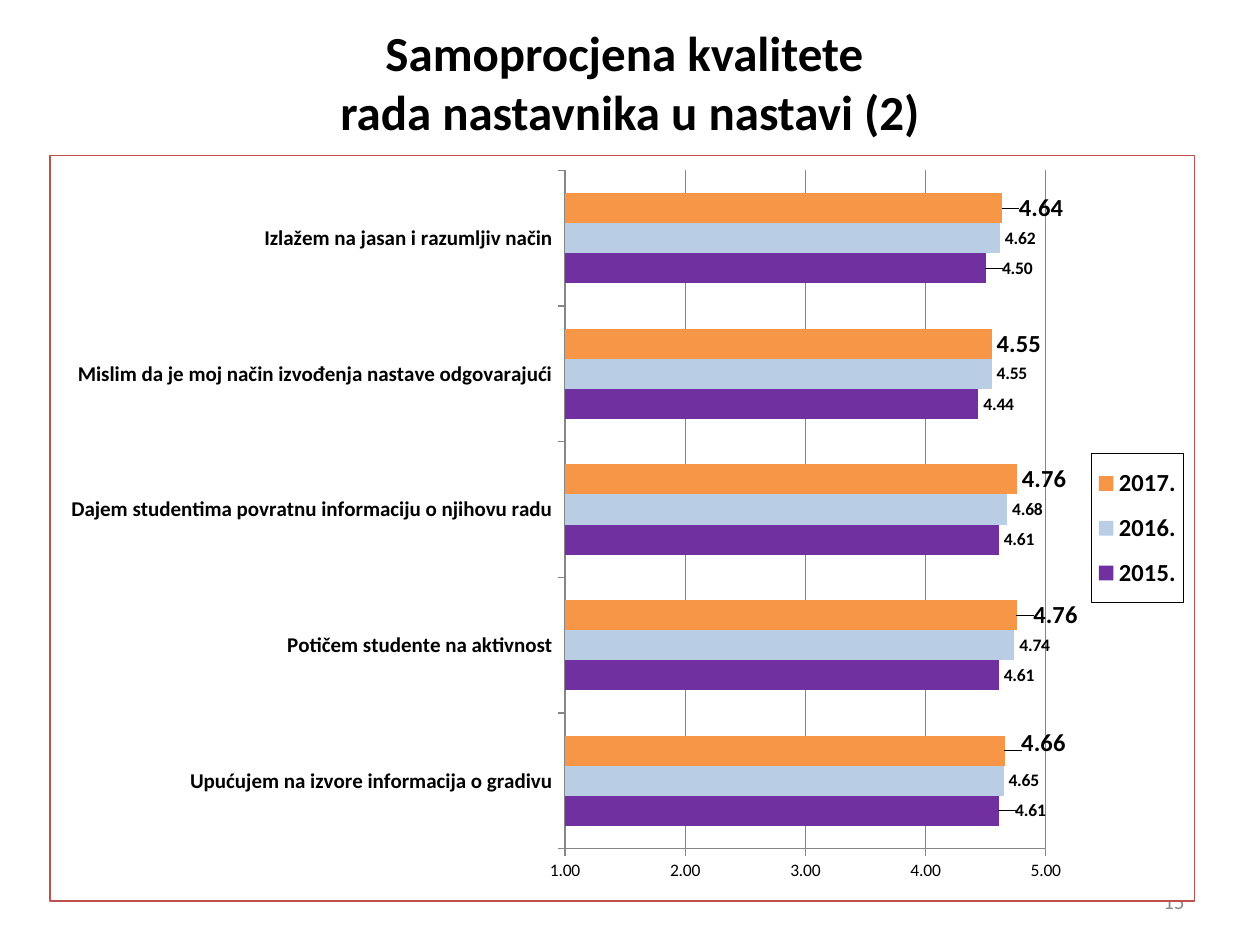
import dataclasses
from typing import Any, NamedTuple, Sequence

import pptx
import pptx.chart.data
import pptx.dml.color
import pptx.enum.chart
import pptx.enum.text
import pptx.oxml
import pptx.oxml.ns
import pptx.util
from pptx.util import Cm

NUMBER_FORMAT = "0.00"
ALIGN = pptx.enum.text.PP_ALIGN
ANCHOR = pptx.enum.text.MSO_ANCHOR


@dataclasses.dataclass(frozen=True)
class Theme:
    font: str = "Calibri"
    ink: str = "000000"
    paper: str = "FFFFFF"
    muted: str = "898989"
    grid: str = "868686"
    frame: str = "C0504D"
    title_size: int = 28
    legend_size: int = 14
    category_size: int = 12
    small_size: int = 10


class Nudge(NamedTuple):
    """Label shift of one bar, as fractions of the chart."""
    category: int
    x: float
    y: float = 0


class YearSeries(NamedTuple):
    name: str
    grades: Sequence[float]
    color: str
    label_size: int
    nudges: Sequence[Nudge] = ()


THEME = Theme()
STATEMENTS = [
    "Upućujem na izvore informacija o gradivu",
    "Potičem studente na aktivnost",
    "Dajem studentima povratnu informaciju o njihovu radu",
    "Mislim da je moj način izvođenja nastave odgovarajući",
    "Izlažem na jasan i razumljiv način",
]
YEARS = [
    YearSeries("2015.", (4.61, 4.61, 4.61, 4.44, 4.5), "7030A0", THEME.small_size,
               (Nudge(0, 0.01), Nudge(4, 0.01))),
    YearSeries("2016.", (4.65, 4.74, 4.68, 4.55, 4.62), "B9CDE5", THEME.small_size),
    YearSeries("2017.", (4.66, 4.76, 4.76, 4.55, 4.64), "F79646", THEME.legend_size,
               (Nudge(0, 0.01, -0.01), Nudge(1, 0.01), Nudge(4, 0.01))),
]


def rgb(color: str) -> pptx.dml.color.RGBColor:
    return pptx.dml.color.RGBColor.from_string(color)


def format_font(font: Any, size: int, color: str = THEME.ink, bold: bool = False) -> None:
    font.name, font.size, font.bold = THEME.font, pptx.util.Pt(size), bold
    font.color.rgb = rgb(color)


def write_text(frame: Any, lines: Sequence[str], *, size: int, color: str = THEME.ink,
               bold: bool = False, align: Any = ALIGN.CENTER, anchor: Any = ANCHOR.TOP) -> None:
    frame.word_wrap, frame.vertical_anchor = True, anchor
    frame.text = "\n".join(lines)
    for paragraph in frame.paragraphs:
        paragraph.alignment = align
        format_font(paragraph.runs[0].font, size, color, bold)


def chart_xml(body: str) -> Any:
    """Parse a chart fragment whose first tag is c:layout or c:spPr."""
    tag, rest = body.split(">", 1)
    return pptx.oxml.parse_xml(f"{tag} {pptx.oxml.ns.nsdecls('c', 'a')}>{rest}")


def set_layout(parent: Any, previous: str = "", **parts: Any) -> None:
    """Give a chart part a manual layout, placed after the named child."""
    for old in parent.findall(pptx.oxml.ns.qn("c:layout")):
        parent.remove(old)
    fields = "".join(f'<c:{key} val="{value}"/>' for key, value in parts.items())
    layout = chart_xml(f"<c:layout><c:manualLayout>{fields}</c:manualLayout></c:layout>")
    if previous:
        parent.find(pptx.oxml.ns.qn(previous)).addnext(layout)
    else:
        parent.insert(0, layout)


def add_box_style(previous: Any, line: str, points: float) -> None:
    """Fill and outline a chart part; the style follows the given element."""
    previous.addnext(chart_xml(
        f'<c:spPr><a:solidFill><a:srgbClr val="{THEME.paper}"/></a:solidFill>'
        f'<a:ln w="{pptx.util.Pt(points)}"><a:solidFill><a:srgbClr val="{line}"/>'
        "</a:solidFill></a:ln></c:spPr>"))


def style_series(series: Any, year: YearSeries) -> None:
    outside = pptx.enum.chart.XL_LABEL_POSITION.OUTSIDE_END
    series.format.fill.solid()
    series.format.fill.fore_color.rgb = rgb(year.color)
    series.invert_if_negative = False
    labels = series.data_labels
    labels.show_value, labels.position = True, outside
    labels.number_format, labels.number_format_is_linked = NUMBER_FORMAT, False
    format_font(labels.font, year.label_size, bold=True)
    for nudge in year.nudges:
        label = series.points[nudge.category].data_label
        format_font(label.font, year.label_size, bold=True)
        label.position = outside
        entry = next(e for e in labels._element.findall(pptx.oxml.ns.qn("c:dLbl"))
                     if e.find(pptx.oxml.ns.qn("c:idx")).get("val") == str(nudge.category))
        set_layout(entry, "c:idx", x=nudge.x, y=nudge.y)
        entry.find(pptx.oxml.ns.qn("c:layout")).addnext(
            chart_xml(f'<c:numFmt formatCode="{NUMBER_FORMAT}" sourceLinked="0"></c:numFmt>'
                      .replace("<c:numFmt ", "<c:numFmt ")))


def style_axes(chart: Any) -> None:
    grades, statements = chart.value_axis, chart.category_axis
    grades.minimum_scale, grades.maximum_scale, grades.major_unit = 1, 5, 1
    grades.has_major_gridlines = True
    grades.tick_labels.number_format = NUMBER_FORMAT
    grades.tick_labels.number_format_is_linked = False
    format_font(grades.tick_labels.font, THEME.small_size)
    format_font(statements.tick_labels.font, THEME.category_size, bold=True)
    for part in (grades, statements, grades.major_gridlines):
        part.format.line.color.rgb = rgb(THEME.grid)
        part.format.line.width = pptx.util.Pt(0.75)
    for axis in (grades, statements):
        axis.major_tick_mark = pptx.enum.chart.XL_TICK_MARK.OUTSIDE


def add_grades_chart(slide: Any) -> None:
    data = pptx.chart.data.CategoryChartData(number_format=NUMBER_FORMAT)
    data.categories = STATEMENTS
    for year in YEARS:
        data.add_series(year.name, year.grades)
    chart = slide.shapes.add_chart(pptx.enum.chart.XL_CHART_TYPE.BAR_CLUSTERED,
                                   Cm(0.99), Cm(3.12), Cm(23.11), Cm(15.06), data).chart
    chart.has_title = False
    format_font(chart.font, THEME.small_size)
    plot = chart.plots[0]
    plot.gap_width, plot.vary_by_categories = 150, False
    for series, year in zip(plot.series, YEARS):
        style_series(series, year)
    style_axes(chart)

    # Legend in a thin black box
    chart.has_legend = True
    legend = chart.legend
    legend.position = pptx.enum.chart.XL_LEGEND_POSITION.RIGHT
    legend.include_in_layout = False
    format_font(legend.font, THEME.legend_size, bold=True)
    set_layout(legend._element, "c:legendPos", xMode="edge", yMode="edge",
               x=0.91, y=0.4, w=0.08, h=0.2)
    add_box_style(legend._element.find(pptx.oxml.ns.qn("c:overlay")), THEME.ink, 0.75)

    # Plot area and outer frame
    root = chart._chartSpace
    set_layout(root.chart.plotArea, layoutTarget="inner", xMode="edge", yMode="edge",
               x=0.45, y=0.02, w=0.42, h=0.91)
    add_box_style(root.chart, THEME.frame, 1)


def main() -> None:
    deck = pptx.Presentation()
    deck.slide_width, deck.slide_height = Cm(25.4), Cm(19.05)
    slide = deck.slides.add_slide(deck.slide_layouts[5])

    # Title
    title = slide.shapes.title
    title.left, title.top, title.width, title.height = Cm(1.7), Cm(0.33), Cm(21.77), Cm(2.97)
    title.fill.solid()
    title.fill.fore_color.rgb = rgb(THEME.paper)
    write_text(title.text_frame, ["Samoprocjena kvalitete", " rada nastavnika u nastavi (2)"],
               size=THEME.title_size, bold=True)

    # Page number, partly behind the chart
    page_number = slide.shapes.add_textbox(Cm(18.21), Cm(17.65), Cm(5.92), Cm(1.02))
    write_text(page_number.text_frame, ["15"], size=THEME.category_size, color=THEME.muted,
               align=ALIGN.RIGHT, anchor=ANCHOR.MIDDLE)

    add_grades_chart(slide)
    deck.save("out.pptx")


if __name__ == "__main__":
    main()
